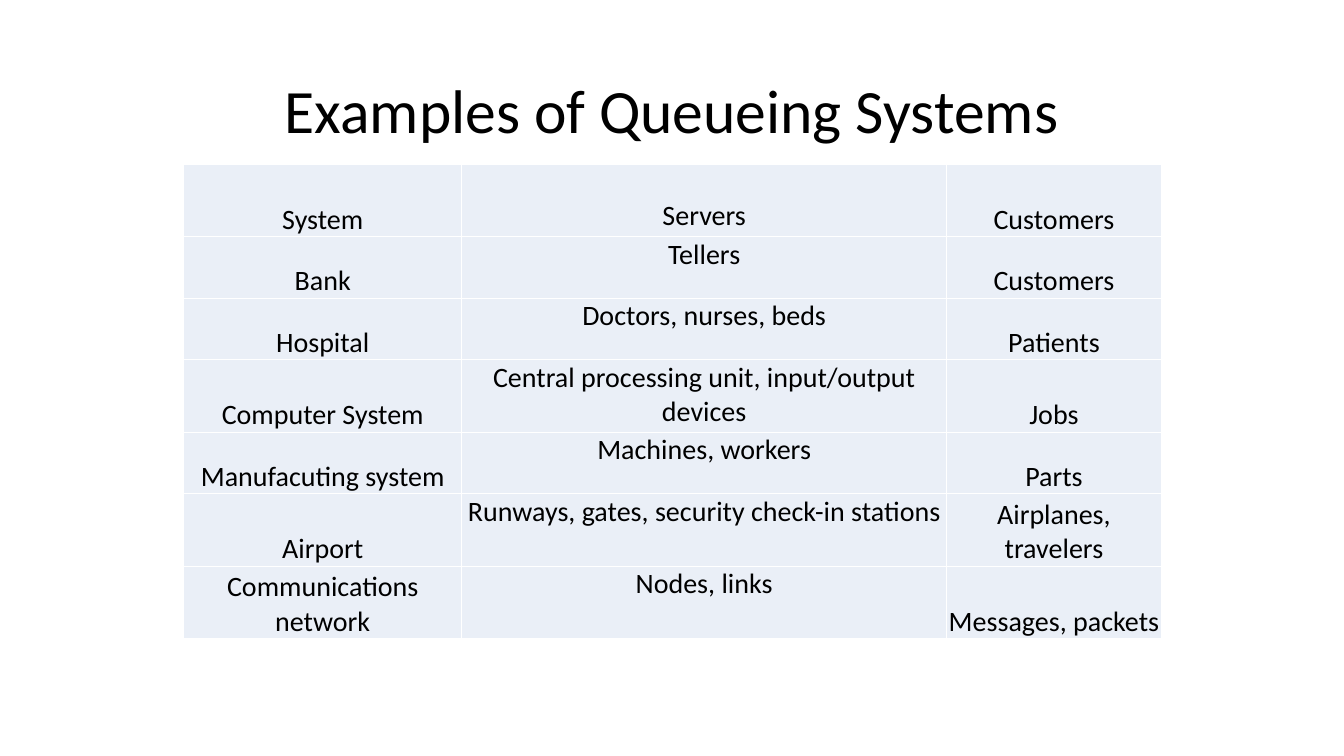
import pptx
import pptx.util
import pptx.dml.color
import pptx.enum.text
import pptx.oxml
import pptx.oxml.ns

Pt = pptx.util.Pt
ANCHOR = pptx.enum.text.MSO_ANCHOR


def rgb(value):
    return pptx.dml.color.RGBColor.from_string(value)


def write(tf, text, size=20, color="000000", font="Calibri", spacing=1.0):
    tf.word_wrap = True
    p = tf.paragraphs[0]
    p.alignment = pptx.enum.text.PP_ALIGN.CENTER
    p.line_spacing = spacing
    r = p.add_run()
    r.text = text
    r.font.size = Pt(size)
    r.font.name = font
    r.font.color.rgb = rgb(color)


prs = pptx.Presentation()
prs.slide_width, prs.slide_height = Pt(960), Pt(540)
s = prs.slides.add_slide(prs.slide_layouts[6])

# Title
sp = s.shapes.add_textbox(Pt(66), Pt(28.75), Pt(828), Pt(104.4))
sp.text_frame.vertical_anchor = ANCHOR.MIDDLE
write(sp.text_frame, "Examples of Queueing Systems", size=44, spacing=0.9)

# Table content
rows = [
    ("System", "Servers", "Customers"),
    ("Bank", "Tellers", "Customers"),
    ("Hospital", "Doctors, nurses, beds", "Patients"),
    ("Computer System", "Central processing unit, input/output devices", "Jobs"),
    ("Manufacuting system", "Machines, workers", "Parts"),
    ("Airport", "Runways, gates, security check-in stations", "Airplanes, travelers"),
    ("Communications network", "Nodes, links", "Messages, packets"),
]
widths = [198.7, 346.3, 153.4]
tall, short = 51.84, 43.92
heights = [tall, short, short, tall, short, tall, tall]

# Table grid
frame = s.shapes.add_table(len(rows), len(widths), Pt(131.2), Pt(117.2),
                           Pt(sum(widths)), Pt(sum(heights)))
table = frame.table
table.first_row = table.horz_banding = False
for column, width in zip(table.columns, widths):
    column.width = Pt(width)
for row, height in zip(table.rows, heights):
    row.height = Pt(height)

# Cells: the servers column hangs from the top, the others sit at the bottom
for i, row in enumerate(rows):
    for j, text in enumerate(row):
        cell = table.cell(i, j)
        cell.margin_left = cell.margin_right = cell.margin_top = Pt(0.72)
        cell.margin_bottom = 0
        cell.vertical_anchor = ANCHOR.TOP if j == 1 else ANCHOR.BOTTOM
        write(cell.text_frame, text)
        for side in ("lnL", "lnR", "lnT", "lnB"):
            cell._tc.get_or_add_tcPr().append(pptx.oxml.parse_xml(
                f'<a:{side} {pptx.oxml.ns.nsdecls("a")} w="{Pt(1)}"><a:solidFill>'
                f'<a:srgbClr val="FFFFFF"/></a:solidFill></a:{side}>'))
        cell.fill.solid()
        cell.fill.fore_color.rgb = rgb("EAEFF7")

# The servers heading starts one line lower
table.cell(0, 1).margin_top = Pt(25.1)

prs.save("out.pptx")
